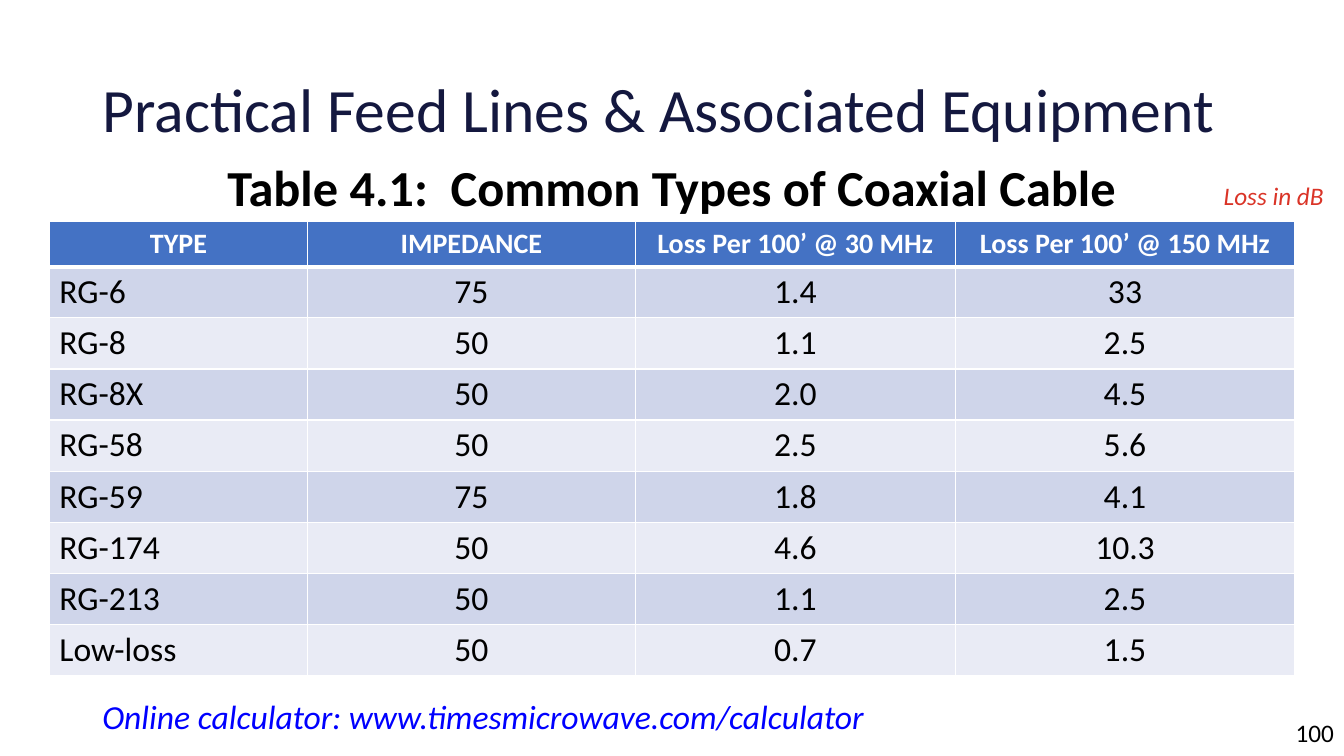
from dataclasses import dataclass

from lxml.etree import SubElement
from pptx import Presentation
from pptx.dml.color import RGBColor
from pptx.enum.text import MSO_ANCHOR, MSO_AUTO_SIZE, PP_ALIGN
from pptx.oxml.ns import qn
from pptx.util import Emu, Pt

PX = 9525  # EMU in one px, 96 px to the inch


@dataclass(frozen=True)
class Theme:
    font: str = "Calibri"
    navy: str = "14183F"
    black: str = "000000"
    white: str = "FFFFFF"
    red: str = "DA3427"
    link: str = "0000FF"
    head: str = "4472C4"
    bands: tuple = ("CFD5EA", "E9EBF5")
    title: int = 44
    caption: int = 36
    body: int = 24
    label: int = 20
    note: int = 18


def px(*sizes):
    return [Emu(size * PX) for size in sizes]


def put(frame, text, font, size, color, bold=False, italic=False,
        align=PP_ALIGN.LEFT, spacing=None):
    """Fill a text frame with one formatted paragraph."""
    para = frame.paragraphs[0]
    para.alignment = align
    if spacing:
        para.line_spacing = spacing
    run = para.add_run()
    run.text = text
    run.font.name = font
    run.font.size = Pt(size)
    run.font.bold = bold
    run.font.italic = italic
    run.font.color.rgb = RGBColor.from_string(color)


def edge(cell, side, width, color):
    """Draw one cell border; call in the order L, R, T, B, before the fill."""
    line = SubElement(cell._tc.get_or_add_tcPr(), qn(f"a:ln{side}"), w=str(Pt(width)))
    fill = SubElement(line, qn("a:solidFill"))
    SubElement(fill, qn("a:srgbClr"), val=color)


class Page:
    def __init__(self, slide, theme):
        self.slide = slide
        self.theme = theme

    def title(self, text, box):
        shape = self.slide.shapes.title
        shape.left, shape.top, shape.width, shape.height = px(*box)
        frame = shape.text_frame
        frame.auto_size = MSO_AUTO_SIZE.NONE
        frame.vertical_anchor = MSO_ANCHOR.MIDDLE
        put(frame, text, self.theme.font, self.theme.title, self.theme.navy, spacing=0.9)

    def text(self, text, box, size, color, **style):
        frame = self.slide.shapes.add_textbox(*px(*box)).text_frame
        frame.word_wrap = True
        frame.auto_size = MSO_AUTO_SIZE.SHAPE_TO_FIT_TEXT
        put(frame, text, self.theme.font, size, color, **style)

    def table(self, rows, spot, widths, heights):
        box = (*spot, sum(widths), sum(heights))
        table = self.slide.shapes.add_table(len(rows), len(widths), *px(*box)).table
        for col, width in zip(table.columns, px(*widths)):
            col.width = width
        for row, height in zip(table.rows, px(*heights)):
            row.height = height
        for r, row in enumerate(rows):
            for c, text in enumerate(row):
                self.cell(table.cell(r, c), text, r, c)

    def cell(self, cell, text, row, col):
        theme = self.theme
        head = row == 0
        thick = {"T": 3 if row == 1 else 1, "B": 3 if head else 1}
        for side in "LRTB":
            edge(cell, side, thick.get(side, 1), theme.white)
        cell.fill.solid()
        shade = theme.head if head else theme.bands[(row - 1) % 2]
        cell.fill.fore_color.rgb = RGBColor.from_string(shade)
        put(cell.text_frame, text, theme.font,
            theme.label if head else theme.body,
            theme.white if head else theme.black, bold=head,
            align=PP_ALIGN.CENTER if head or col else PP_ALIGN.LEFT)


CABLES = [
    ("TYPE", "IMPEDANCE", "Loss Per 100’ @ 30 MHz", "Loss Per 100’ @ 150 MHz"),
    ("RG-6", "75", "1.4", "33"),
    ("RG-8", "50", "1.1", "2.5"),
    ("RG-8X", "50", "2.0", "4.5"),
    ("RG-58", "50", "2.5", "5.6"),
    ("RG-59", "75", "1.8", "4.1"),
    ("RG-174", "50", "4.6", "10.3"),
    ("RG-213", "50", "1.1", "2.5"),
    ("Low-loss", "50", "0.7", "1.5"),
]


def main():
    deck = Presentation()
    deck.slide_width, deck.slide_height = px(1280, 720)
    theme = Theme()
    page = Page(deck.slides.add_slide(deck.slide_layouts[5]), theme)

    page.title("Practical Feed Lines & Associated Equipment", (88, 38, 1104, 139))
    page.table(CABLES, (47, 211), (246, 312, 305, 323),
               [43] + [48] * (len(CABLES) - 1))
    page.text("Table 4.1:  Common Types of Coaxial Cable", (111, 144, 1058, 68),
              theme.caption, theme.black, bold=True, align=PP_ALIGN.CENTER)
    page.text("Loss in dB", (1156, 167, 154, 38), theme.note, theme.red, italic=True)
    page.text("Online calculator: www.timesmicrowave.com/calculator",
              (88, 658, 943, 48), theme.body, theme.link, italic=True)
    page.text("100", (1215, 678, 65, 38), theme.note, theme.black, align=PP_ALIGN.RIGHT)

    deck.save("out.pptx")


if __name__ == "__main__":
    main()
